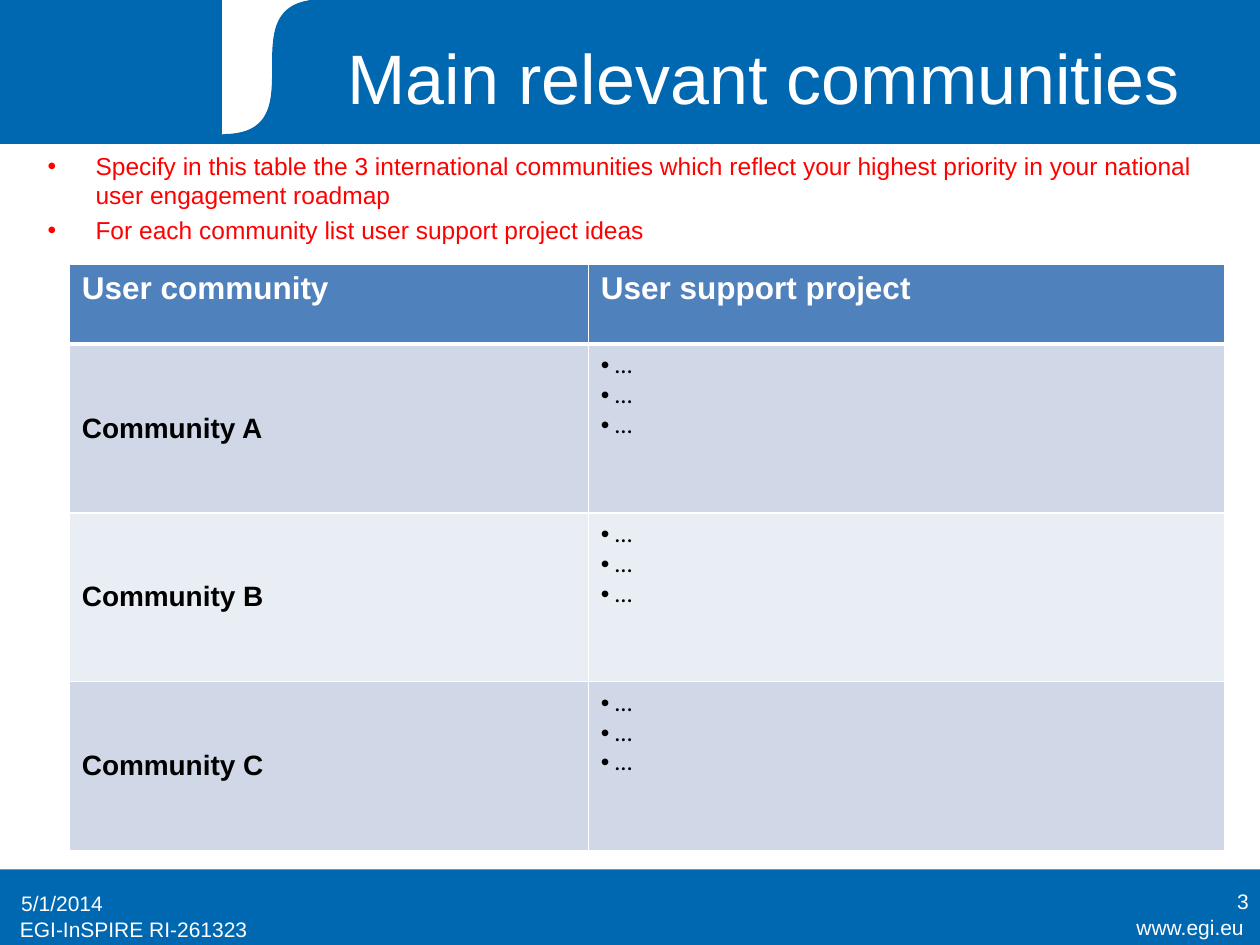
from lxml.etree import SubElement
from pptx import Presentation
from pptx.dml.color import RGBColor
from pptx.enum.shapes import MSO_SHAPE
from pptx.enum.text import MSO_ANCHOR, PP_ALIGN
from pptx.oxml.ns import qn
from pptx.util import Inches, Pt

# Content
TITLE = "Main relevant communities"
NOTES = [
    "Specify in this table the 3 international communities which reflect your "
    "highest priority in your national user engagement roadmap",
    "For each community list user support project ideas",
]
HEADINGS = ["User community", "User support project"]
COMMUNITIES = ["Community A", "Community B", "Community C"]
IDEAS = [" …"] * 3
FOOTERS = [  # text, left, top, width, height, alignment
    ("www.egi.eu", 8.39, 7.2, 1.58, 0.31, PP_ALIGN.RIGHT),
    ("EGI-InSPIRE RI-261323", 0.06, 7.22, 2.5, 0.31, PP_ALIGN.LEFT),
    ("5/1/2014", 0.07, 6.97, 2.33, 0.4, PP_ALIGN.LEFT),
    ("3", 7.68, 6.95, 2.33, 0.4, PP_ALIGN.RIGHT),
]

# Style and grid
BLUE, WHITE, RED, BLACK = "0067B1", "FFFFFF", "FF0000", "000000"
HEADING_FILL, BANDS = "4F81BD", ["D0D8E8", "E9EDF4"]
WIDTH, HEIGHT = 10, 7.5
HEADER_HEIGHT, FOOTER_HEIGHT = 1.14, 0.6
TAB_LEFT, TAB_WIDTH, TAB_HEIGHT, CURVE_WIDTH = 1.77, 1.97, 1.07, 0.79
COLUMNS, HEADING_ROW, COMMUNITY_ROW = [4.12, 5.05], 0.63, 1.34


def color(value):
    return RGBColor.from_string(value)


def paint(shape, fill, outlined=True):
    shape.shadow.inherit = False
    shape.fill.solid()
    shape.fill.fore_color.rgb = color(fill)
    if outlined:
        shape.line.color.rgb = color(fill)
        shape.line.width = Pt(0.75)
    else:
        shape.line.fill.background()


def add_band(left, top, width, height, fill, outlined=True):
    band = slide.shapes.add_shape(
        MSO_SHAPE.RECTANGLE, *map(Inches, (left, top, width, height)))
    paint(band, fill, outlined)


def write(frame, lines, size=12, ink=WHITE, font="Arial", bold=False,
          align=PP_ALIGN.LEFT, bullet=False, hanging=0, gap=0):
    frame.word_wrap = True
    for index, line in enumerate(lines):
        para = frame.paragraphs[0] if index == 0 else frame.add_paragraph()
        if bullet:
            properties = para._p.get_or_add_pPr()
            properties.set("marL", str(Inches(hanging)))
            properties.set("indent", str(-Inches(hanging)))
            SubElement(properties, qn("a:buFont"), typeface="Arial")
            SubElement(properties, qn("a:buChar"), char="•")
        para.alignment = align
        if index:
            para.space_before = Pt(gap)
        span = para.add_run()
        span.text = line
        span.font.size, span.font.name, span.font.bold = Pt(size), font, bold
        span.font.color.rgb = color(ink)


def add_text(lines, left, top, width, height, anchor=MSO_ANCHOR.MIDDLE, **style):
    box = slide.shapes.add_textbox(*map(Inches, (left, top, width, height)))
    box.text_frame.vertical_anchor = anchor
    write(box.text_frame, lines, **style)


def dress_cell(cell, fill, top=1, bottom=1):
    properties = cell._tc.get_or_add_tcPr()
    for side, points in (("L", 1), ("R", 1), ("T", top), ("B", bottom)):
        border = SubElement(properties, qn(f"a:ln{side}"), w=str(Pt(points)))
        SubElement(SubElement(border, qn("a:solidFill")), qn("a:srgbClr"), val=WHITE)
    cell.fill.solid()
    cell.fill.fore_color.rgb = color(fill)


deck = Presentation()
deck.slide_width, deck.slide_height = Inches(WIDTH), Inches(HEIGHT)
slide = deck.slides.add_slide(deck.slide_layouts[6])

# Footer and header bands, with a white tab in the header
add_band(0, HEIGHT - FOOTER_HEIGHT, WIDTH, FOOTER_HEIGHT, BLUE, outlined=False)
add_band(0, 0, WIDTH, HEADER_HEIGHT, BLUE)
add_band(TAB_LEFT, 0, TAB_WIDTH, TAB_HEIGHT, WHITE)

# Blue S-curve edge: a cubic curve whose handles lie level with its ends
STEPS = 40
curve = []
for step in range(STEPS + 1):
    t = step / STEPS
    across = 3 * t * (1 - t) ** 2 + t ** 3
    rise = 3 * t ** 2 * (1 - t) + t ** 3
    curve.append((Inches(TAB_LEFT + CURVE_WIDTH * across),
                  Inches(TAB_HEIGHT * (1 - rise))))
right = Inches(TAB_LEFT + TAB_WIDTH)
builder = slide.shapes.build_freeform(right, 0)
builder.add_line_segments([(right, Inches(TAB_HEIGHT))] + curve, close=True)
paint(builder.convert_to_shape(), BLUE)

# Title, footer texts and instructions
add_text([TITLE], 2.32, 0.13, 7.48, 0.95, size=40, align=PP_ALIGN.CENTER)
for text, left, top, width, height, align in FOOTERS:
    add_text([text], left, top, width, height, align=align)
add_text(NOTES, 0.28, 1.15, 9.45, 0.87, anchor=MSO_ANCHOR.TOP, size=14, ink=RED,
         bullet=True, hanging=0.38, gap=2.8)

# Table of communities
heights = [HEADING_ROW] + [COMMUNITY_ROW] * len(COMMUNITIES)
table = slide.shapes.add_table(
    len(heights), len(COLUMNS), Inches(0.55), Inches(2.1),
    Inches(sum(COLUMNS)), Inches(sum(heights))).table
for column, width in zip(table.columns, COLUMNS):
    column.width = Inches(width)
for row, height in zip(table.rows, heights):
    row.height = Inches(height)
for index, heading in enumerate(HEADINGS):
    cell = table.cell(0, index)
    dress_cell(cell, HEADING_FILL, bottom=3)
    write(cell.text_frame, [heading], size=18, bold=True)
for number, community in enumerate(COMMUNITIES, start=1):
    name_cell, idea_cell = table.cell(number, 0), table.cell(number, 1)
    for cell in (name_cell, idea_cell):
        dress_cell(cell, BANDS[(number - 1) % 2], top=3 if number == 1 else 1)
    name_cell.vertical_anchor = MSO_ANCHOR.MIDDLE
    write(name_cell.text_frame, [community], size=16, ink=BLACK, bold=True)
    write(idea_cell.text_frame, IDEAS, size=14, ink=BLACK, font="Calibri", bullet=True)

deck.save("out.pptx")
